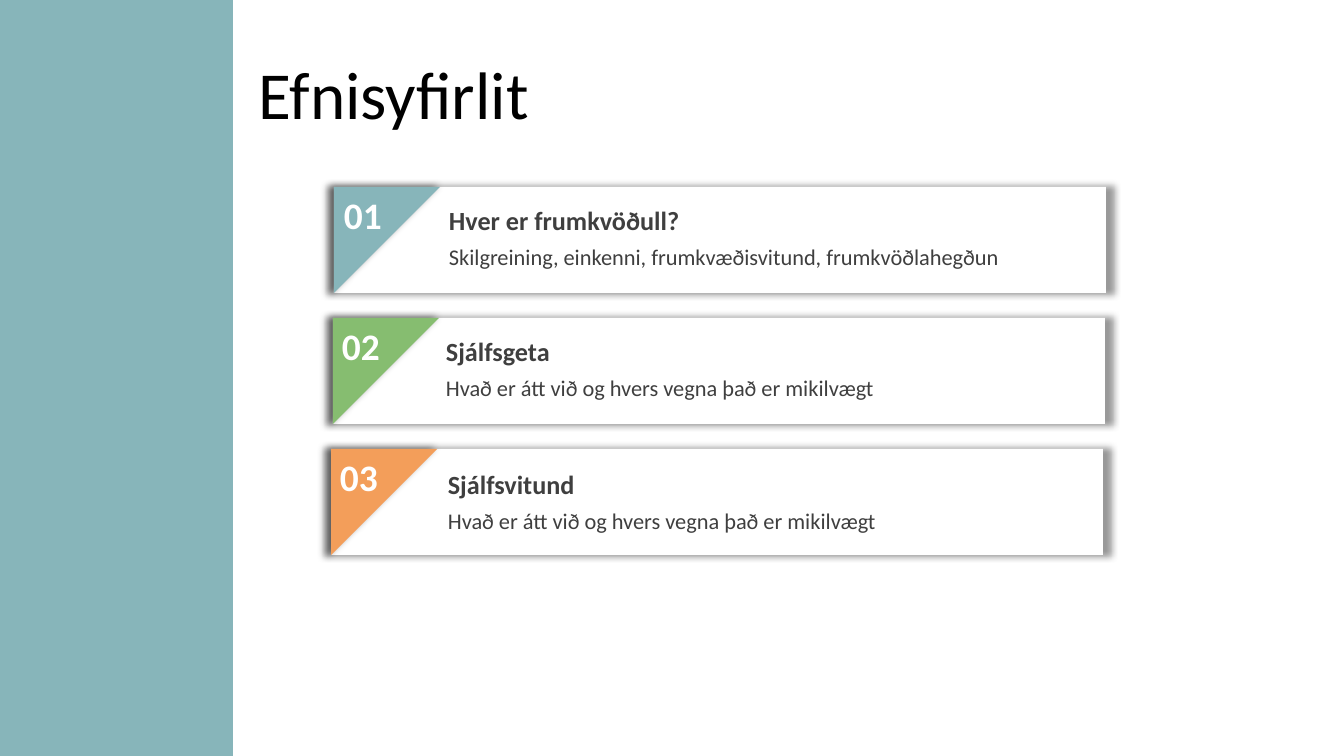
from lxml import etree
from pptx import Presentation
from pptx.dml.color import RGBColor
from pptx.enum.shapes import MSO_SHAPE
from pptx.enum.text import MSO_ANCHOR
from pptx.oxml.ns import qn
from pptx.util import Pt

RECT, WEDGE = MSO_SHAPE.RECTANGLE, MSO_SHAPE.RIGHT_TRIANGLE
TOP, MIDDLE = MSO_ANCHOR.TOP, MSO_ANCHOR.MIDDLE

TEAL = RGBColor(0x87, 0xB5, 0xBA)
GREEN = RGBColor(0x86, 0xBD, 0x70)
ORANGE = RGBColor(0xF3, 0x9E, 0x5A)
GREY = RGBColor(0x3F, 0x3F, 0x3F)
BLACK = RGBColor(0, 0, 0)
WHITE = RGBColor(255, 255, 255)

TITLE = "Efnisyfirlit"
# number, heading, detail, colour, card left, text left, text drop
TOPICS = [
    ("01", "Hver er frumkvöðull?",
     "Skilgreining, einkenni, frumkvæðisvitund, frumkvöðlahegðun",
     TEAL, 334, 439, 12),
    ("02", "Sjálfsgeta", "Hvað er átt við og hvers vegna það er mikilvægt",
     GREEN, 333, 436, 12),
    ("03", "Sjálfsvitund", "Hvað er átt við og hvers vegna það er mikilvægt",
     ORANGE, 331, 438, 14),
]

WIDE, HIGH = 1344, 756
CARD_TOP, PITCH = 187, 131
CARD_W, CARD_H = 772, 106
DETAIL_DROP = 39
SCALE = 914400 / 100.8


def px(*sizes):
    return [round(size * SCALE) for size in sizes]


def add_box(shapes, kind, box, fill, glow=False):
    shape = shapes.add_shape(kind, *px(*box))
    shape.shadow.inherit = False
    shape.fill.solid()
    shape.fill.fore_color.rgb = fill
    shape.line.fill.background()
    if glow:
        add_glow(shape)
    return shape


def add_glow(shape):
    """Give the shape a soft shadow that is slightly larger than itself."""
    effects = shape.element.spPr.find(qn("a:effectLst"))
    shadow = etree.SubElement(
        effects, qn("a:outerShdw"), blurRad=str(Pt(5)), sx="102000",
        sy="102000", algn="ctr", rotWithShape="0")
    color = etree.SubElement(shadow, qn("a:srgbClr"), val="000000")
    etree.SubElement(color, qn("a:alpha"), val="40000")


def add_text(shapes, text, box, size, color, bold=False, anchor=TOP):
    frame = shapes.add_textbox(*px(*box)).text_frame
    frame.word_wrap = True
    frame.vertical_anchor = anchor
    run = frame.paragraphs[0].add_run()
    run.text = text
    font = run.font
    font.name, font.size, font.bold = "Calibri", Pt(size), bold
    font.color.rgb = color


def add_topic(shapes, row, topic):
    number, heading, detail, color, left, text_left, drop = topic
    top = CARD_TOP + row * PITCH
    card = shapes.add_group_shape().shapes
    add_box(card, RECT, (left, top, CARD_W, CARD_H), WHITE, glow=True)
    wedge = add_box(card, WEDGE, (left, top, CARD_H, CARD_H), color, glow=True)
    wedge.rotation = 90
    add_text(shapes, number, (334 - 2 * row, top, 79, 55), 26.7, WHITE,
             bold=True)
    label = shapes.add_group_shape().shapes
    line = top + drop
    add_text(label, heading, (text_left, line, 646, 42), 18.7, GREY, bold=True)
    add_text(label, detail, (text_left, line + DETAIL_DROP, 666, 37), 16, GREY)


def main():
    deck = Presentation()
    deck.slide_width, deck.slide_height = px(WIDE, HIGH)
    shapes = deck.slides.add_slide(deck.slide_layouts[6]).shapes
    add_box(shapes, RECT, (0, 0, 233, HIGH), TEAL)
    add_text(shapes, TITLE, (249, 50, 969, 85), 48, BLACK, anchor=MIDDLE)
    for row, topic in enumerate(TOPICS):
        add_topic(shapes, row, topic)
    deck.save("out.pptx")


if __name__ == "__main__":
    main()
